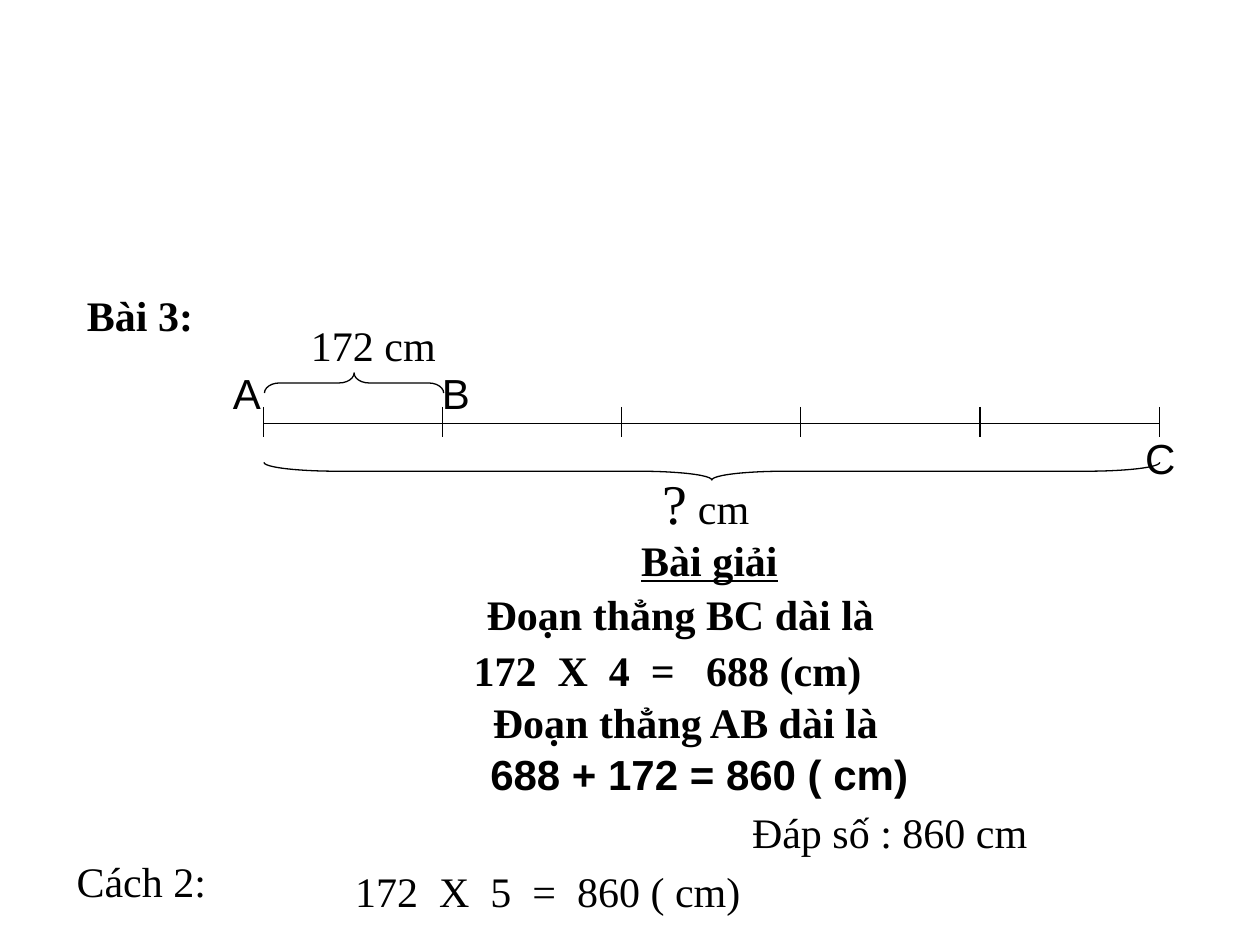
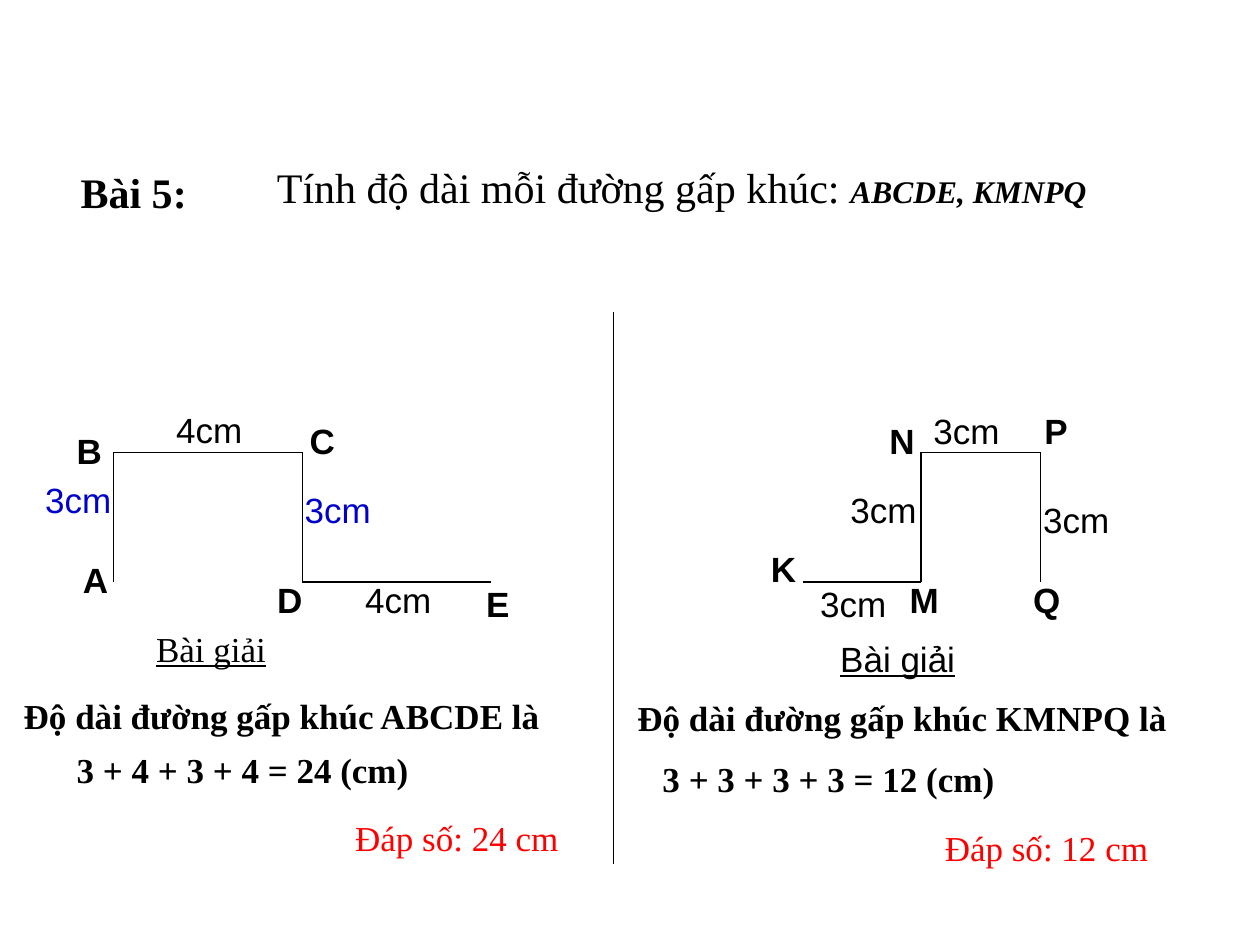
from dataclasses import dataclass, replace
from itertools import pairwise

from pptx import Presentation
from pptx.dml.color import RGBColor
from pptx.enum.shapes import MSO_CONNECTOR, MSO_SHAPE
from pptx.enum.text import MSO_ANCHOR, MSO_AUTO_SIZE, PP_ALIGN
from pptx.oxml import parse_xml
from pptx.oxml.ns import nsdecls
from pptx.slide import Slide
from pptx.util import Inches, Pt

COLS, ROWS = 100, 75
WIDE, HIGH = Inches(10), Inches(7.5)
HUES = {"ink": "000000", "blue": "0000CC", "red": "FF0000"}
SERIF, SANS = "Times New Roman", "Arial"
HEIGHTS = {20: 4.3, 24: 5, 32: 6.3}
STROKE = Pt(0.75)


@dataclass(frozen=True)
class Style:
    size: int
    face: str = SERIF
    hue: str = "ink"
    bold: bool = False
    slant: bool = False
    under: bool = False


@dataclass(frozen=True)
class Label:
    text: str
    left: float
    top: float
    width: float
    style: Style
    center: bool = False
    tail: str = ""
    after: Style | None = None


@dataclass(frozen=True)
class Brace:
    mid: float
    row: float
    span: float
    depth: float
    turn: int
    curve: float


@dataclass(frozen=True)
class Figure:
    points: list[tuple[float, float]]
    names: list[tuple[str, float, float]]
    sides: list[tuple[str, float, float, str]]
    notes: list[Label]


BIG = Style(24)
BOLD = replace(BIG, bold=True)
LETTER = Style(24, SANS)
MARK = Style(20, SANS, bold=True)
HEAD = Style(20, under=True)
PROOF = Style(20, bold=True)
RESULT = Style(20, hue="red")


def col(count: float) -> int:
    return round(WIDE * count / COLS)


def row(count: float) -> int:
    return round(HIGH * count / ROWS)


def color(name: str) -> RGBColor:
    return RGBColor.from_string(HUES[name])


def dress(run, style: Style) -> None:
    font = run.font
    font.size, font.name = Pt(style.size), style.face
    font.bold, font.italic, font.underline = style.bold, style.slant, style.under
    font.color.rgb = color(style.hue)


def fill(box, label: Label) -> None:
    frame = box.text_frame
    frame.text = label.text
    frame.word_wrap = True
    frame.auto_size = MSO_AUTO_SIZE.NONE
    frame.vertical_anchor = MSO_ANCHOR.TOP
    para = frame.paragraphs[0]
    para.alignment = PP_ALIGN.CENTER if label.center else PP_ALIGN.LEFT
    dress(para.runs[0], label.style)
    if label.tail:
        run = para.add_run()
        run.text = label.tail
        dress(run, label.after or label.style)


def write(slide: Slide, label: Label) -> None:
    size = HEIGHTS[label.style.size]
    box = slide.shapes.add_textbox(
        col(label.left), row(label.top), col(label.width), row(size))
    fill(box, label)


def start(deck, text: str, left: float, top: float) -> Slide:
    slide = deck.slides.add_slide(deck.slide_layouts[5])
    title = slide.shapes.title
    title.left, title.top = col(left), row(top)
    title.width, title.height = col(12.6), row(HEIGHTS[BOLD.size])
    fill(title, Label(text, left, top, 12.6, BOLD))
    return slide


def rule(slide: Slide, begin: tuple[float, float], end: tuple[float, float]) -> None:
    line = slide.shapes.add_connector(
        MSO_CONNECTOR.STRAIGHT, col(begin[0]), row(begin[1]), col(end[0]), row(end[1]))
    line.line.width = STROKE
    line.line.color.rgb = color("ink")
    line._element.spPr.append(parse_xml(f"<a:effectLst {nsdecls('a')}/>"))


def chain(slide: Slide, points: list[tuple[float, float]]) -> None:
    for begin, end in pairwise(points):
        rule(slide, begin, end)


def embrace(slide: Slide, brace: Brace) -> None:
    shape = slide.shapes.add_shape(
        MSO_SHAPE.LEFT_BRACE,
        col(brace.mid - brace.depth / 2), row(brace.row - brace.span / 2),
        col(brace.depth), row(brace.span))
    shape.rotation = brace.turn
    shape.adjustments[0] = brace.curve
    shape.shadow.inherit = False
    shape.fill.background()
    shape.line.width = STROKE
    shape.line.color.rgb = color("ink")


def draw(slide: Slide, figure: Figure) -> None:
    chain(slide, figure.points)
    for name, left, top in figure.names:
        write(slide, Label(name, left, top, 5.5, MARK))
    for text, left, top, hue in figure.sides:
        write(slide, Label(text, left, top, 10.2, Style(20, SANS, hue)))
    for note in figure.notes:
        write(slide, note)


def build_sum(deck) -> None:
    slide = start(deck, "Bài 3:", 5.9, 22.5)
    first, step, level, parts = 20.9, 14.22, 33.6, 5
    marks = [first + step * part for part in range(parts + 1)]
    chain(slide, [(mark, level) for mark in marks])
    for mark in marks:
        rule(slide, (mark, 32.3), (mark, 34.7))
    embrace(slide, Brace(28.1, 30.4, step, 1.6, 90, 0.75))
    embrace(slide, Brace(56.5, 37.4, step * parts, 1.4, 270, 4.17))
    for label in [
        Label("172 cm", 23.7, 24.9, 15, BIG),
        Label("?", 51.6, 36.7, 10.2, Style(32), tail=" cm", after=BIG),
        Label("A", 17.5, 28.7, 6.3, LETTER),
        Label("B", 34.1, 28.7, 6.3, LETTER),
        Label("C", 89.9, 33.8, 6.3, LETTER),
        Label("Bài giải", 43.7, 41.9, 25.2, replace(BOLD, under=True), True),
        Label("Đoạn thẳng BC dài là", 34.3, 46.2, 39.4, BOLD, True),
        Label("172  X  4  =   688 (cm)", 36.6, 50.7, 42.5, BOLD),
        Label("Đoạn thẳng AB dài là", 23.3, 54.8, 62.2, BOLD, True),
        Label("688 + 172 = 860 ( cm)", 30.3, 58.9, 50.4, replace(LETTER, bold=True), True),
        Label("Đáp số : 860 cm", 58.7, 63.5, 33.9, BIG),
        Label("Cách 2:", 5.1, 67.4, 18.9, BIG),
        Label("172  X  5  =  860 ( cm)", 27.2, 68.2, 40.9, BIG),
    ]:
        write(slide, label)


def build_paths(deck) -> None:
    slide = start(deck, "Bài 5:", 5.4, 12.7)
    write(slide, Label("Tính độ dài mỗi đường gấp khúc: ", 21, 12.3, 75.6, BIG,
                       tail="ABCDE, KMNPQ", after=Style(18, bold=True, slant=True)))
    high, low = 35.9, 46.2
    rule(slide, (48.7, 24.8), (48.7, 68.6))
    draw(slide, Figure(
        [(9, low), (9, high), (24, high), (24, low), (39, low)],
        [("A", 5.6, 43.8), ("B", 5.1, 33.6), ("C", 23.6, 32.8),
         ("D", 21, 45.4), ("E", 37.6, 45.7)],
        [("3cm", 2.6, 37.5, "blue"), ("4cm", 13, 31.9, "ink"),
         ("3cm", 23.2, 38.3, "blue"), ("4cm", 28, 45.4, "ink")],
        [Label("Bài giải", 11.4, 49.3, 17.3, HEAD),
         Label("Độ dài đường gấp khúc ABCDE là", 0.9, 54.6, 50.4, PROOF),
         Label("3 + 4 + 3 + 4 = 24 (cm)", 5.1, 58.9, 37, PROOF),
         Label("Đáp số: 24 cm", 27.2, 64.3, 21.3, RESULT)]))
    draw(slide, Figure(
        [(63.7, low), (73.1, low), (73.1, high), (82.6, high), (82.6, low)],
        [("K", 60.2, 43), ("M", 71.2, 45.4), ("N", 69.6, 32.8),
         ("P", 81.9, 32), ("Q", 81, 45.4)],
        [("3cm", 64.1, 45.7, "ink"), ("3cm", 66.5, 38.3, "ink"),
         ("3cm", 73.1, 32, "ink"), ("3cm", 81.8, 39.1, "ink")],
        [Label("Bài giải", 65.7, 50.1, 17.3, replace(HEAD, face=SANS)),
         Label("Độ dài đường gấp khúc KMNPQ là", 49.6, 54.8, 50.4, PROOF),
         Label("3 + 3 + 3 + 3 = 12 (cm)", 51.6, 59.6, 37, PROOF),
         Label("Đáp số: 12 cm", 74, 65.1, 26, RESULT)]))


def main() -> None:
    deck = Presentation()
    deck.slide_width, deck.slide_height = WIDE, HIGH
    build_sum(deck)
    build_paths(deck)
    deck.save("out.pptx")


if __name__ == "__main__":
    main()
